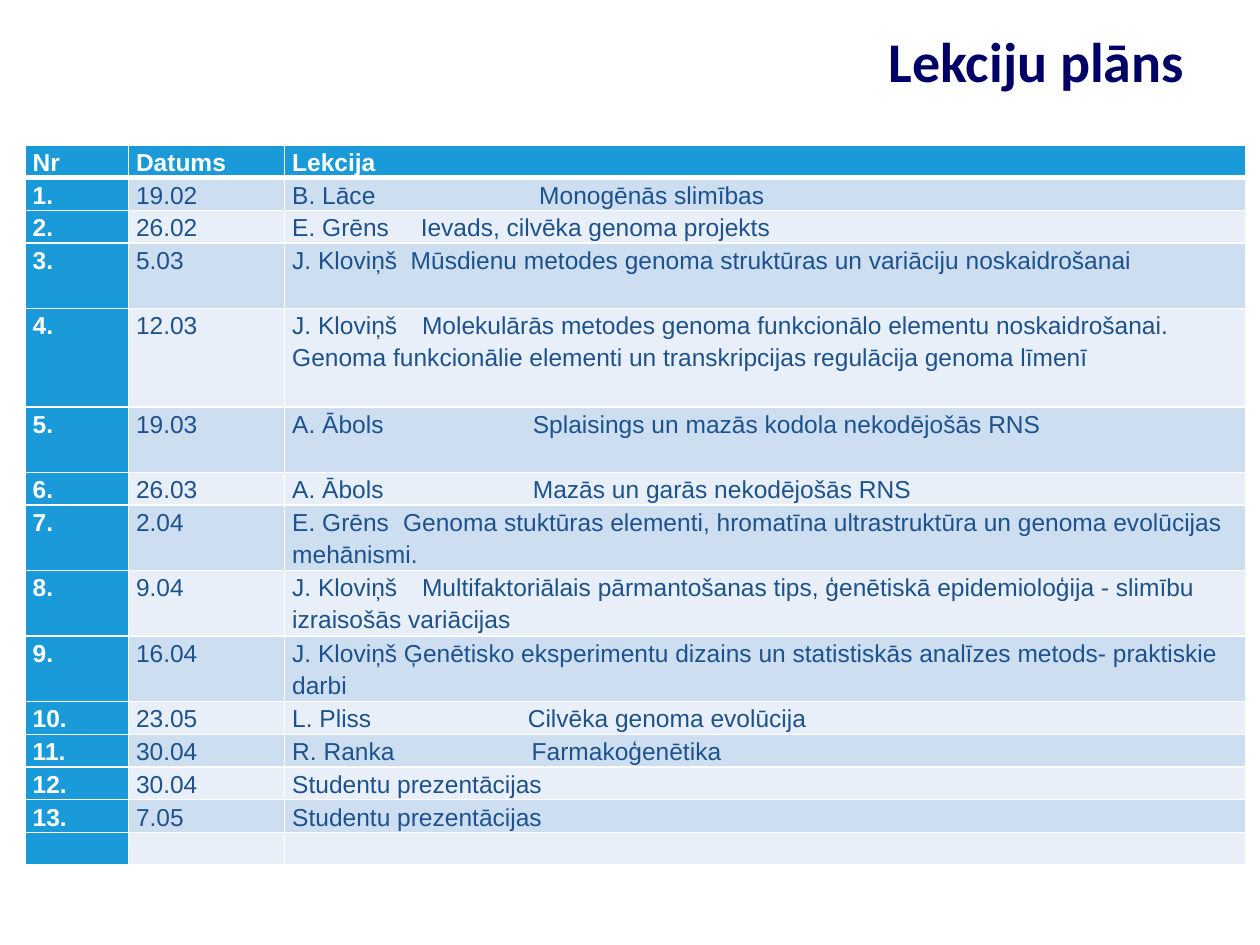
from dataclasses import dataclass

from lxml import etree
from pptx import Presentation
from pptx.dml.color import RGBColor
from pptx.enum.text import MSO_ANCHOR, PP_ALIGN
from pptx.oxml.ns import qn
from pptx.util import Inches, Pt

RIGHT = PP_ALIGN.RIGHT
MIDDLE = MSO_ANCHOR.MIDDLE
TITLE_ONLY = 5

HEADINGS = ("Nr", "Datums", "Lekcija")
COLUMN_WIDTHS = (0.82, 1.24, 7.63)
LINE_HEIGHT = 0.26
# date, lecturer, topic tab position, topic, height in lines
LECTURES = (
    ("19.02", "B. Lāce", 1.96, "Monogēnās slimības", 1),
    ("26.02", "E. Grēns", 1.02, "Ievads, cilvēka genoma projekts", 1),
    ("5.03", "J. Kloviņš", 0.94, "Mūsdienu metodes genoma struktūras un variāciju noskaidrošanai", 2),
    ("12.03", "J. Kloviņš", 1.03, "Molekulārās metodes genoma funkcionālo elementu noskaidrošanai. "
     "Genoma funkcionālie elementi un transkripcijas regulācija genoma līmenī", 3),
    ("19.03", "A. Ābols", 1.91, "Splaisings un mazās kodola nekodējošās RNS", 2),
    ("26.03", "A. Ābols", 1.91, "Mazās un garās nekodējošās RNS", 1),
    ("2.04", "E. Grēns", 0.88, "Genoma stuktūras elementi, hromatīna ultrastruktūra un genoma "
     "evolūcijas mehānismi.", 2),
    ("9.04", "J. Kloviņš", 1.03, "Multifaktoriālais pārmantošanas tips, ģenētiskā epidemioloģija - "
     "slimību izraisošās variācijas", 2),
    ("16.04", "J. Kloviņš Ģenētisko eksperimentu dizains un statistiskās analīzes metods- "
     "praktiskie darbi", None, "", 2),
    ("23.05", "L. Pliss", 1.87, "Cilvēka genoma evolūcija", 1),
    ("30.04", "R. Ranka", 1.9, "Farmakoģenētika", 1),
    ("30.04", "Studentu prezentācijas", None, "", 1),
    ("7.05", "Studentu prezentācijas", None, "", 1),
)


@dataclass(frozen=True)
class Theme:
    """Colours, fonts and type sizes of the slide."""

    navy: str = "000066"
    white: str = "FFFFFF"
    accent: str = "1B9AD9"
    text: str = "1D528D"
    bands: tuple = ("E8EFF8", "CDDEF1")
    title_font: str = "Calibri"
    table_font: str = "Arial"
    title_size: int = 32
    table_size: int = 14


class SlideBuilder:
    """Builds titles and schedule tables on the current slide."""

    def __init__(self, slide, theme):
        self.slide = slide
        self.theme = theme

    def apply(self, target, values):
        """Set every attribute listed in values."""
        for name, value in values.items():
            setattr(target, name, value)

    def format_run(self, run, font, size, color, bold):
        """Set the type of a run."""
        self.apply(run.font, {"name": font, "size": Pt(size), "bold": bold})
        run.font.color.rgb = RGBColor.from_string(color)

    def title(self, text, left, top, width, height):
        """Place and format the title."""
        shape = self.slide.shapes.title
        self.apply(shape, {"left": Inches(left), "top": Inches(top),
                           "width": Inches(width), "height": Inches(height)})
        shape.text_frame.vertical_anchor = MIDDLE
        paragraph = shape.text_frame.paragraphs[0]
        paragraph.alignment = RIGHT
        run = paragraph.add_run()
        run.text = text
        self.format_run(run, self.theme.title_font, self.theme.title_size, self.theme.navy, True)

    def borders(self, cell, bottom):
        """Draw white borders around a cell."""
        properties = cell._tc.get_or_add_tcPr()
        for side, width in (("lnL", 1), ("lnR", 1), ("lnT", 1), ("lnB", bottom)):
            line = etree.SubElement(properties, qn(f"a:{side}"), w=str(Pt(width)))
            fill = etree.SubElement(line, qn("a:solidFill"))
            etree.SubElement(fill, qn("a:srgbClr"), val=self.theme.white)

    def cell(self, cell, text, fill, color, bold, tab=None, bottom=1):
        """Fill and format one table cell."""
        self.borders(cell, bottom)
        self.apply(cell, {"margin_left": Inches(0.06), "margin_right": Inches(0.06),
                          "margin_top": 0, "margin_bottom": 0})
        cell.fill.solid()
        cell.fill.fore_color.rgb = RGBColor.from_string(fill)
        paragraph = cell.text_frame.paragraphs[0]
        if tab:
            tabs = etree.SubElement(paragraph._p.get_or_add_pPr(), qn("a:tabLst"))
            etree.SubElement(tabs, qn("a:tab"), pos=str(Inches(tab)), algn="l")
        paragraph.line_spacing = 1.15
        if text:
            run = paragraph.add_run()
            run.text = text
            self.format_run(run, self.theme.table_font, self.theme.table_size, color, bold)
        else:
            etree.SubElement(paragraph._p, qn("a:endParaRPr"), sz=str(self.theme.table_size * 100))

    def schedule(self, left, top):
        """Draw the lecture table with a blank closing row."""
        theme = self.theme
        lines = [1, *(lecture[-1] for lecture in LECTURES), 1]
        table = self.slide.shapes.add_table(
            len(lines), len(HEADINGS), Inches(left), Inches(top),
            Inches(sum(COLUMN_WIDTHS)), Inches(LINE_HEIGHT * sum(lines))).table
        for column, width in zip(table.columns, COLUMN_WIDTHS):
            column.width = Inches(width)
        for row, count in zip(table.rows, lines):
            row.height = Inches(LINE_HEIGHT * count)
        for column, heading in enumerate(HEADINGS):
            self.cell(table.cell(0, column), heading, theme.accent, theme.white, True, bottom=3)
        rows = [*LECTURES, ("", "", None, "", 1)]
        for number, (date, lecturer, tab, topic, _) in enumerate(rows, 1):
            band = theme.bands[number % 2]
            label = f"{number}." if date else ""
            lecture = f"{lecturer}\t{topic}" if topic else lecturer
            self.cell(table.cell(number, 0), label, theme.accent, theme.white, True)
            self.cell(table.cell(number, 1), date, band, theme.text, False)
            self.cell(table.cell(number, 2), lecture, band, theme.text, False, tab)


def main():
    """Build and save the lecture plan."""
    presentation = Presentation()
    presentation.slide_width = Inches(10)
    presentation.slide_height = Inches(7.5)
    slide = presentation.slides.add_slide(presentation.slide_layouts[TITLE_ONLY])
    builder = SlideBuilder(slide, Theme())
    builder.title("Lekciju plāns", 0.5, 0.17, 9, 0.62)
    builder.schedule(0.2, 1.15)
    presentation.save("out.pptx")


if __name__ == "__main__":
    main()
